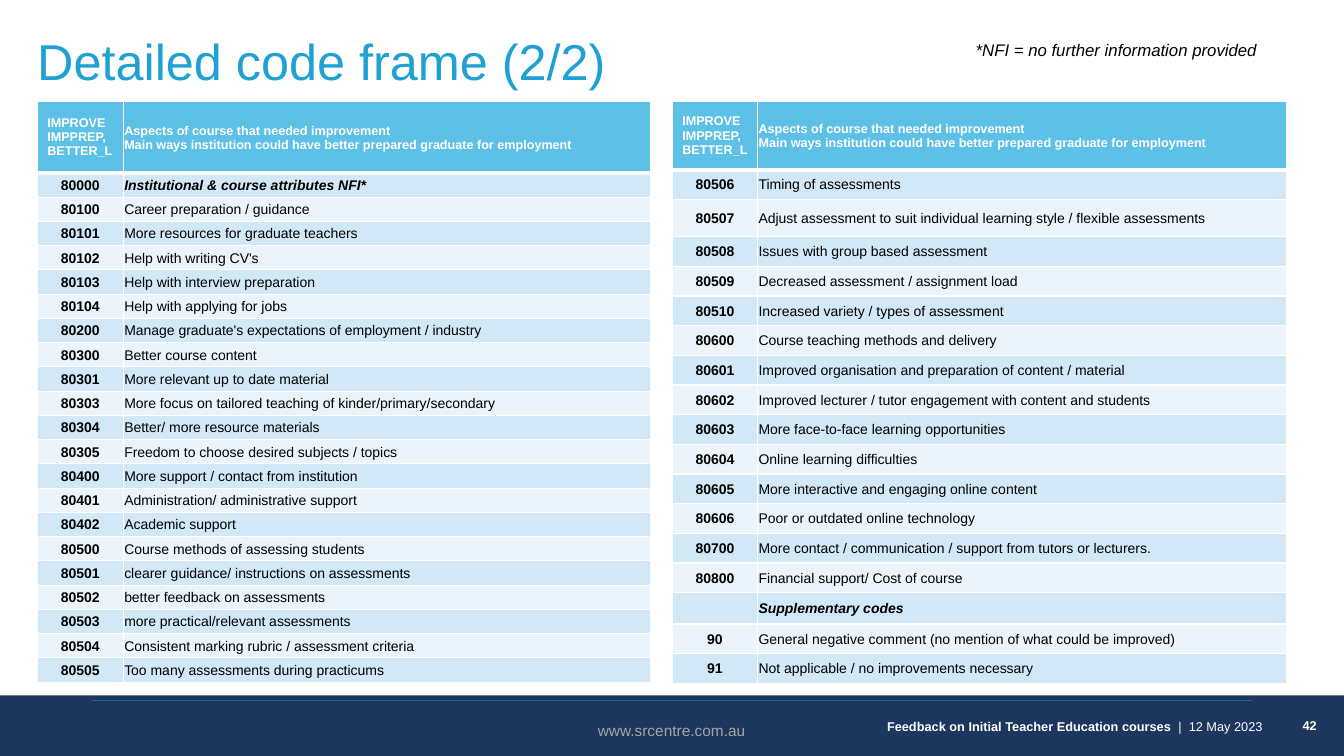
import pptx
import pptx.util
import pptx.dml.color
import pptx.enum.shapes
import pptx.enum.text
import pptx.oxml
import pptx.oxml.ns

Pt = pptx.util.Pt
ALIGN = pptx.enum.text.PP_ALIGN
MIDDLE = pptx.enum.text.MSO_ANCHOR.MIDDLE
TOP = pptx.enum.text.MSO_ANCHOR.TOP
HEAD = ("Aspects of course that needed improvement",
        "Main ways institution could have better prepared graduate for employment")
CODES = ("IMPROVE", "IMPPREP, BETTER_L")
BANDS = ("D2E8F6", "EAF4FA")
LEFT = [
    ("80000", "Institutional & course attributes NFI*"),
    ("80100", "Career preparation / guidance"),
    ("80101", "More resources for graduate teachers"),
    ("80102", "Help with writing CV's"),
    ("80103", "Help with interview preparation"),
    ("80104", "Help with applying for jobs"),
    ("80200", "Manage graduate's expectations of employment / industry"),
    ("80300", "Better course content"),
    ("80301", "More relevant up to date material"),
    ("80303", "More focus on tailored teaching of kinder/primary/secondary"),
    ("80304", "Better/ more resource materials"),
    ("80305", "Freedom to choose desired subjects / topics"),
    ("80400", "More support / contact from institution"),
    ("80401", "Administration/ administrative support"),
    ("80402", "Academic support"),
    ("80500", "Course methods of assessing students"),
    ("80501", "clearer guidance/ instructions on assessments"),
    ("80502", "better feedback on assessments"),
    ("80503", "more practical/relevant assessments"),
    ("80504", "Consistent marking rubric / assessment criteria"),
    ("80505", "Too many assessments during practicums"),
]
RIGHT = [
    ("80506", "Timing of assessments"),
    ("80507", "Adjust assessment to suit individual learning style / flexible assessments"),
    ("80508", "Issues with group based assessment"),
    ("80509", "Decreased assessment / assignment load"),
    ("80510", "Increased variety / types of assessment"),
    ("80600", "Course teaching methods and delivery"),
    ("80601", "Improved organisation and preparation of content / material"),
    ("80602", "Improved lecturer / tutor engagement with content and students"),
    ("80603", "More face-to-face learning opportunities"),
    ("80604", "Online learning difficulties"),
    ("80605", "More interactive and engaging online content"),
    ("80606", "Poor or outdated online technology"),
    ("80700", "More contact / communication / support from tutors or lecturers."),
    ("80800", "Financial support/ Cost of course"),
    ("", "Supplementary codes"),
    ("90", "General negative comment (no mention of what could be improved)"),
    ("91", "Not applicable / no improvements necessary"),
]
GROUPS = ("Institutional & course attributes NFI*", "Supplementary codes")


def paint(target, color):
    target.solid()
    target.fore_color.rgb = pptx.dml.color.RGBColor.from_string(color)


def write(para, text, size, color, bold=False, italic=False):
    run = para.add_run()
    run.text = text
    font = run.font
    font.name, font.size, font.bold, font.italic = "Arial", Pt(size), bold, italic
    paint(font.fill, color)


def label(slide, box, runs, size, color, align=ALIGN.LEFT, anchor=TOP, inset=(7.2, 3.6)):
    """Place one line of text; each run is (text, bold, italic)."""
    frame = slide.shapes.add_textbox(*map(Pt, box)).text_frame
    frame.word_wrap = True
    frame.vertical_anchor = anchor
    frame.margin_left = frame.margin_right = Pt(inset[0])
    frame.margin_top = frame.margin_bottom = Pt(inset[1])
    para = frame.paragraphs[0]
    para.alignment = align
    for text, bold, italic in runs:
        write(para, text, size, color, bold, italic)


def border(cell, base):
    """Draw white cell edges, with the bottom one as wide as given."""
    props = cell._tc.get_or_add_tcPr()
    for spot, (side, width) in enumerate(zip("LRTB", (1, 1, 1, base))):
        props.insert(spot, pptx.oxml.parse_xml(
            f'<a:ln{side} {pptx.oxml.ns.nsdecls("a")} w="{Pt(width)}"><a:solidFill>'
            f'<a:srgbClr val="FFFFFF"/></a:solidFill></a:ln{side}>'))


def fill(cell, lines, size, color, back, bold, italic=False, align=ALIGN.LEFT,
         tight=True, base=1):
    cell.vertical_anchor = MIDDLE
    if tight:
        cell.margin_left = cell.margin_right = cell.margin_top = Pt(0.7)
        cell.margin_bottom = 0
    paint(cell.fill, back)
    border(cell, base)
    frame = cell.text_frame
    for spot, line in enumerate(lines):
        para = frame.add_paragraph() if spot else frame.paragraphs[0]
        para.alignment = align
        write(para, line, size, color, bold, italic)


def frame_table(slide, box, split, top, rows, tall=None):
    """Build a code table; tall maps a row number to its own height."""
    tall = tall or {}
    table = slide.shapes.add_table(len(rows) + 1, 2, *map(Pt, box)).table
    table.columns[0].width = Pt(split)
    table.columns[1].width = Pt(box[2] - split)
    step = (box[3] - top - sum(tall.values())) / (len(rows) - len(tall))
    table.rows[0].height = Pt(top)
    for col, lines in enumerate((CODES, HEAD)):
        fill(table.cell(0, col), lines, 9, "FFFFFF", "5CC0E7", True,
             tight=col == 1, base=3)
    for row, (code, text) in enumerate(rows, 1):
        table.rows[row].height = Pt(tall.get(row, step))
        back = BANDS[(row - 1) % 2]
        group = text in GROUPS
        fill(table.cell(row, 0), [code], 10, "000000", back, True, align=ALIGN.CENTER)
        fill(table.cell(row, 1), [text], 10, "000000", back, group, group)


def footer(slide, box):
    left, top, width, height = box
    bar = slide.shapes.add_shape(pptx.enum.shapes.MSO_SHAPE.RECTANGLE, *map(Pt, box))
    bar.shadow.inherit = False
    paint(bar.fill, "1C365E")
    bar.line.fill.background()
    label(slide, (left + 326.9, top + 13, 584.6, 18),
          [("Feedback on Initial Teacher Education courses  ", True, False),
           ("|  12 May 2023 ", False, False)],
          9.1, "FFFFFF", ALIGN.RIGHT, MIDDLE)
    label(slide, (left + 911.5, top + 3.6, 48, 36), [("42", True, False)],
          9.1, "FFFFFF", ALIGN.CENTER, MIDDLE, (0, 0))
    label(slide, (left + 357.8, top + 14.4, 244, 21),
          [("www.srcentre.com.au", False, False)], 11, "A6A6A6", ALIGN.CENTER)
    rule = slide.shapes.add_connector(
        pptx.enum.shapes.MSO_CONNECTOR.STRAIGHT,
        Pt(left + 66), Pt(top + 3.6), Pt(left + width - 66), Pt(top + 3.6))
    paint(rule.line.fill, "156B8D")
    rule.line.width = Pt(0.75)
    rule._element.spPr.append(
        pptx.oxml.parse_xml(f'<a:effectLst {pptx.oxml.ns.nsdecls("a")}/>'))


def header(slide, box):
    left, top, width, height = box
    label(slide, box, [("Detailed code frame (2/2)", False, False)],
          36, "1FA1D3", inset=(0, 0))
    label(slide, (left + 663.2, top + 3.6, 291.6, 21.6),
          [("*NFI = no further information provided", False, True)], 12, "000000")


def main():
    deck = pptx.Presentation()
    deck.slide_width, deck.slide_height = Pt(960), Pt(540)
    slide = deck.slides.add_slide(deck.slide_layouts[6])
    footer(slide, (0, 496.8, 960, 43.2))
    header(slide, (26.6, 21.6, 907.2, 51.1))
    frame_table(slide, (26.6, 72.7, 438.5, 414.7), 61.5, 50.8, LEFT)
    frame_table(slide, (480.2, 72.7, 438.5, 414.7), 61, 48.5, RIGHT, {2: 26.6})
    deck.save("out.pptx")


if __name__ == "__main__":
    main()
